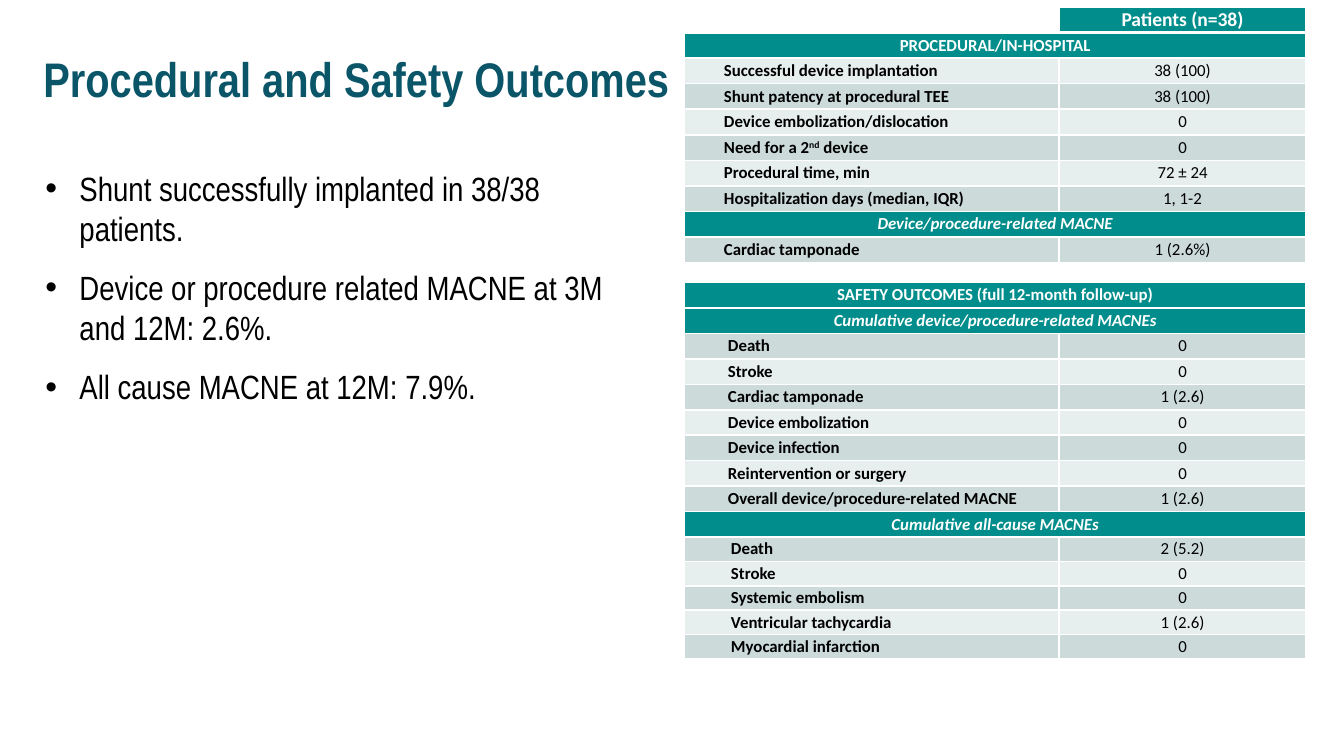
from lxml import etree
from pptx import Presentation
from pptx.dml.color import RGBColor
from pptx.enum.text import MSO_ANCHOR, MSO_AUTO_SIZE, PP_ALIGN
from pptx.oxml.ns import qn
from pptx.util import Emu, Pt

LEFT, CENTER = PP_ALIGN.LEFT, PP_ALIGN.CENTER
TOP, MIDDLE = MSO_ANCHOR.TOP, MSO_ANCHOR.MIDDLE
NO_FIT = MSO_AUTO_SIZE.NONE
SCALE = 9144000 / 1344
TEAL, PALE, GREY = "008D8B", "E7EEEE", "CCDBDA"
WHITE, BLACK, NAVY = "FFFFFF", "000000", "0B5569"
NARROW, SANS = "Arial Narrow", "Calibri"

POINTS = [
    "Shunt successfully implanted in 38/38 patients.",
    "Device or procedure related MACNE at 3M and 12M: 2.6%.",
    "All cause MACNE at 12M: 7.9%.",
]
BANDS = [(10, 256), (1, 20), (10, 255), (5, 122)]
GAP = 10
GROUPS = [
    (1, "PROCEDURAL/IN-HOSPITAL", False, 36, [
        ("Successful device implantation", "38 (100)"),
        ("Shunt patency at procedural TEE", "38 (100)"),
        ("Device embolization/dislocation", "0"),
        ("Need for a 2^nd^ device", "0"),
        ("Procedural time, min", "72 ± 24"),
        ("Hospitalization days (median, IQR)", "1, 1-2"),
    ]),
    (8, "Device/procedure-related MACNE", True, 36, [
        ("Cardiac tamponade", "1 (2.6%)"),
    ]),
    (11, "SAFETY OUTCOMES (full 12-month follow-up)", False, 0, []),
    (12, "Cumulative device/procedure-related MACNEs", True, 40, [
        ("Death", "0"),
        ("Stroke", "0"),
        ("Cardiac tamponade", "1 (2.6)"),
        ("Device embolization", "0"),
        ("Device infection", "0"),
        ("Reintervention or surgery", "0"),
        ("Overall device/procedure-related MACNE", "1 (2.6)"),
    ]),
    (20, "Cumulative all-cause MACNEs", True, 43, [
        ("Death", "2 (5.2)"),
        ("Stroke", "0"),
        ("Systemic embolism", "0"),
        ("Ventricular tachycardia", "1 (2.6)"),
        ("Myocardial infarction", "0"),
    ]),
]


def px(n):
    return Emu(round(n * SCALE))


def color(code):
    return RGBColor.from_string(code)


def add_run(para, text, size, face, code, bold=False, slant=False):
    run = para.add_run()
    run.text = text
    font = run.font
    font.size, font.name = Pt(size), face
    font.bold, font.italic = bold, slant
    font.color.rgb = color(code)
    return run


def indent(para, left, first):
    props = para._p.get_or_add_pPr()
    props.set("marL", str(px(left)))
    props.set("indent", str(px(first)))


def place(shape, left, top, width, height, anchor):
    shape.left, shape.top = px(left), px(top)
    shape.width, shape.height = px(width), px(height)
    frame = shape.text_frame
    frame.word_wrap = True
    frame.auto_size = NO_FIT
    frame.vertical_anchor = anchor
    return frame


def add_title(slide):
    frame = place(slide.shapes.title, 30, 20, 1275, 116, MIDDLE)
    para = frame.paragraphs[0]
    para.alignment = LEFT
    add_run(para, "Procedural and Safety Outcomes", 26, NARROW, NAVY, True)


def add_list(slide):
    frame = place(slide.placeholders[1], 32, 161, 624, 344, TOP)
    for i, text in enumerate(POINTS):
        para = frame.add_paragraph() if i else frame.paragraphs[0]
        para.space_before = Pt(10)
        indent(para, 34, -34)
        add_run(para, text, 18, NARROW, BLACK)


def edge(cell, side, width):
    line = etree.SubElement(cell._tc.get_or_add_tcPr(), qn("a:ln" + side))
    line.set("w", str(Pt(width)))
    fill = etree.SubElement(line, qn("a:solidFill"))
    etree.SubElement(fill, qn("a:srgbClr")).set("val", WHITE)


def prepare(cell, row):
    cell.margin_left = cell.margin_right = px(4)
    cell.margin_top = cell.margin_bottom = 0
    cell.vertical_anchor = MIDDLE
    thick = {("B", 0), ("T", 1)}
    for side in "LRTB":
        edge(cell, side, 1.5 if (side, row) in thick else 1)
    cell.fill.background()
    end = etree.SubElement(cell.text_frame.paragraphs[0]._p, qn("a:endParaRPr"))
    end.set("sz", "600")


def fill_cell(cell, text, back, code, align=CENTER, size=9,
              bold=True, slant=False, inset=0):
    cell.fill.solid()
    cell.fill.fore_color.rgb = color(back)
    para = cell.text_frame.paragraphs[0]
    para.alignment = align
    if inset:
        indent(para, 0, inset)
    for i, part in enumerate(text.split("^")):
        run = add_run(para, part, size, SANS, code, bold, slant)
        if i % 2:
            run._r.get_or_add_rPr().set("baseline", "30000")


def span(grid, row):
    grid.cell(row, 0).merge(grid.cell(row, 1))


def add_group(grid, start, head, slant, inset, items):
    span(grid, start)
    fill_cell(grid.cell(start, 0), head, TEAL, WHITE, slant=slant)
    for row, (label, value) in enumerate(items, start + 1):
        back = GREY if row % 2 else PALE
        fill_cell(grid.cell(row, 0), label, back, BLACK, LEFT, inset=inset)
        fill_cell(grid.cell(row, 1), value, back, BLACK, bold=False)


def add_grid(slide):
    tall = [height / count for count, height in BANDS for _ in range(count)]
    frame = slide.shapes.add_table(len(tall), 2, px(684), px(7),
                                   px(622), px(sum(tall)))
    grid = frame.table
    grid.first_row = grid.horz_banding = False
    for col, width in zip(grid.columns, (375, 247)):
        col.width = px(width)
    for row, height in enumerate(tall):
        grid.rows[row].height = px(height)
        for cell in grid.rows[row].cells:
            prepare(cell, row)
    fill_cell(grid.cell(0, 1), "Patients (n=38)", TEAL, WHITE, size=10.5)
    span(grid, GAP)
    for group in GROUPS:
        add_group(grid, *group)


def main():
    deck = Presentation()
    deck.slide_width, deck.slide_height = px(1344), px(756)
    slide = deck.slides.add_slide(deck.slide_layouts[1])
    add_title(slide)
    add_list(slide)
    add_grid(slide)
    deck.save("out.pptx")


if __name__ == "__main__":
    main()
